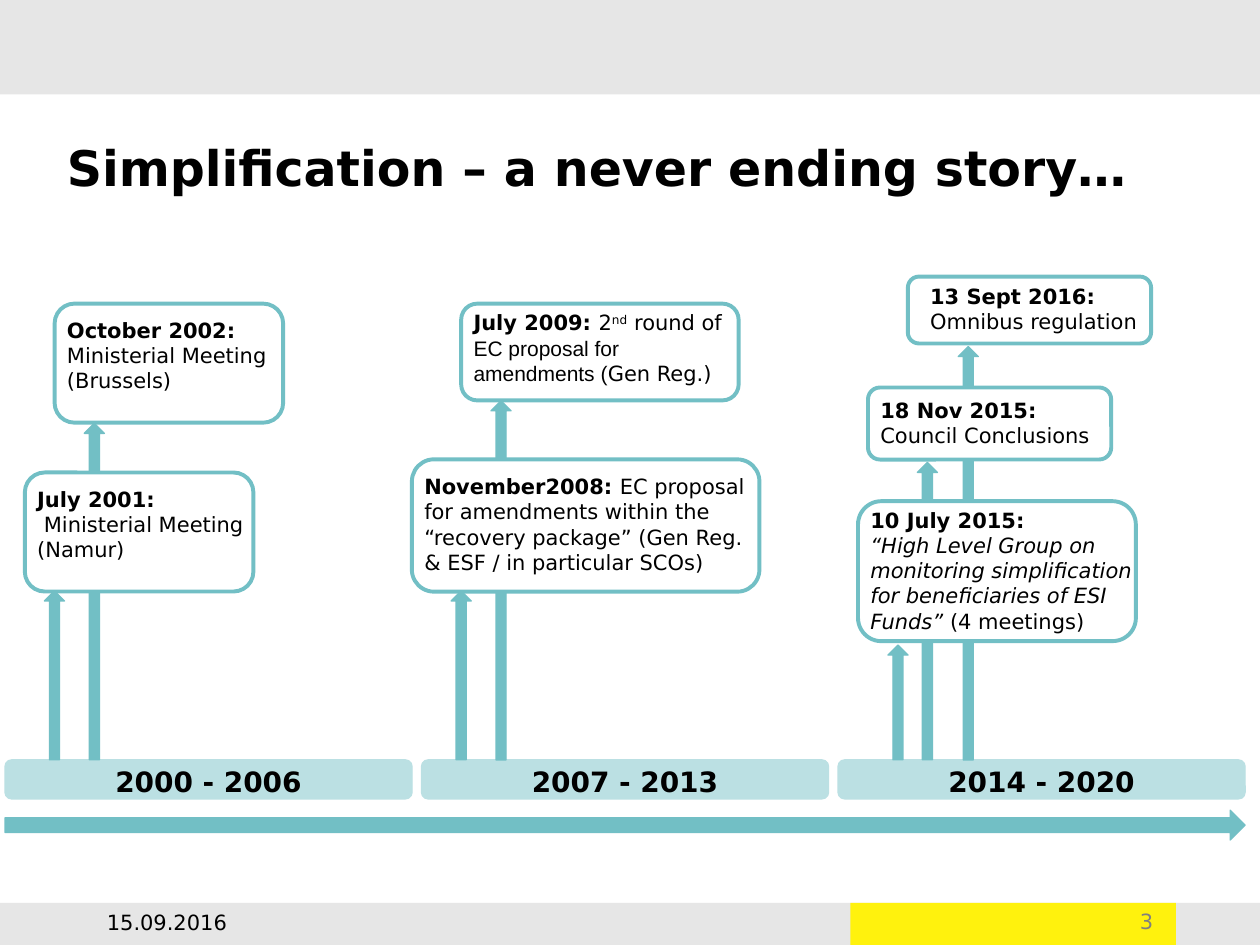
"""Build the simplification timeline slide."""
from dataclasses import dataclass, field

from lxml import etree
from pptx import Presentation
from pptx import util as u
from pptx.dml.color import RGBColor
from pptx.enum import shapes, text
from pptx.oxml import ns

TEAL = RGBColor(0x72, 0xBF, 0xC5)
PALE_TEAL = RGBColor(0xBB, 0xE0, 0xE3)
BAND_GREY = RGBColor(0xE6, 0xE6, 0xE6)
NUMBER_GREY = RGBColor(0x80, 0x80, 0x80)
YELLOW = RGBColor(0xFF, 0xF2, 0x0D)
WHITE = RGBColor(0xFF, 0xFF, 0xFF)
BLACK = RGBColor(0x00, 0x00, 0x00)
FONT = "DejaVu Sans"
SHAPE = shapes.MSO_SHAPE
ALIGN = text.PP_ALIGN

PERIOD_LEFT, PERIOD_PITCH, PERIOD_WIDTH = 2.9, 238, 232.6
PERIOD_TOP, PERIOD_HEIGHT = 434.2, 22.3
ARROW_WIDTH = 11.5


@dataclass(frozen=True)
class Span:
    words: str
    bold: bool = False
    italic: bool = False
    raised: bool = False
    font: str = FONT
    size: float = 12
    color: RGBColor = BLACK


@dataclass(frozen=True)
class Area:
    left: float
    top: float
    width: float
    height: float

    def points(self) -> list:
        return [u.Pt(n) for n in (self.left, self.top, self.width, self.height)]


@dataclass(frozen=True)
class Milestone:
    frame: Area
    words: Area
    paras: list


@dataclass(frozen=True)
class Period:
    label: str
    arrows: list = field(default_factory=list)
    milestones: list = field(default_factory=list)


def heading(words: str) -> Span:
    return Span(words, bold=True)


PERIODS = [
    Period("2000 - 2006", [(48.2, 241.9), (25.4, 337.7)], [
        Milestone(Area(14.2, 270, 130.6, 68), Area(14.2, 274.3, 158.4, 51),
                  [[heading("July 2001:")], [Span(" Ministerial Meeting (Namur)")]]),
        Milestone(Area(31.2, 173.5, 130.6, 68), Area(31.2, 177.8, 158.4, 51),
                  [[heading("October 2002:")], [Span("Ministerial Meeting")],
                   [Span("(Brussels)")]]),
    ]),
    Period("2007 - 2013", [(280.6, 229), (257.8, 337.7)], [
        Milestone(Area(235.4, 262.5, 198.6, 75.6), Area(235.4, 267.1, 198.6, 65.5),
                  [[heading("November2008: "),
                    Span("EC proposal for amendments within the “recovery package” "
                         "(Gen Reg. & ESF / in particular SCOs)")]]),
        Milestone(Area(263.5, 173.5, 158.6, 55.3), Area(263.5, 173.5, 158.6, 51),
                  [[heading("July 2009: "), Span("2"), Span("nd", raised=True),
                    Span(" round of "),
                    Span("EC proposal for amendments (", font="Arial"),
                    Span("Gen Reg.)")]]),
    ]),
    Period("2014 - 2020", [(547.6, 198), (524.2, 264.2), (507.4, 368.6)], [
        Milestone(Area(490.3, 286.4, 158.8, 80), Area(490.3, 286.4, 175.7, 80),
                  [[heading("10 July 2015:")],
                   [Span("“High Level Group on monitoring simplification for "
                         "beneficiaries of ESI Funds” ", italic=True),
                    Span("(4 meetings)")]]),
        Milestone(Area(496, 221.4, 139, 41.2), Area(496, 223.4, 158.4, 36),
                  [[heading("18 Nov 2015:")], [Span("Council Conclusions")]]),
        Milestone(Area(518.8, 158.1, 139, 38.2), Area(524.4, 158.5, 158.4, 36),
                  [[heading("13 Sept 2016:")], [Span("Omnibus regulation")]]),
    ]),
]


def add_block(page, kind, area: Area, fill: RGBColor, line=None, weight: float = 0.75) -> None:
    block = page.shapes.add_shape(kind, *area.points())
    block.shadow.inherit = False
    block.fill.solid()
    block.fill.fore_color.rgb = fill
    if line is None:
        block.line.fill.background()
    else:
        block.line.color.rgb = line
        block.line.width = u.Pt(weight)


def write_paras(frame, paras: list, align) -> None:
    frame.word_wrap = True
    for index, spans in enumerate(paras):
        para = frame.paragraphs[0] if index == 0 else frame.add_paragraph()
        para.alignment = align
        for span in spans:
            run = para.add_run()
            run.text = span.words
            run.font.name = span.font
            run.font.size = u.Pt(span.size)
            run.font.bold = span.bold
            run.font.italic = span.italic
            run.font.color.rgb = span.color
            properties = run.font._element
            if span.raised:
                properties.set("baseline", "30000")
            latin = properties.find(ns.qn("a:latin"))
            for tag in ("a:cs", "a:ea"):
                script_font = etree.Element(ns.qn(tag), typeface=span.font)
                latin.addnext(script_font)


def add_words(page, area: Area, paras: list, align=ALIGN.LEFT) -> None:
    box = page.shapes.add_textbox(*area.points())
    write_paras(box.text_frame, paras, align)


def add_title(page, words: str) -> None:
    title = page.shapes.title
    title.left, title.top, title.width, title.height = Area(31, 71.3, 651.6, 48.2).points()
    title.text_frame.vertical_anchor = text.MSO_ANCHOR.MIDDLE
    write_paras(title.text_frame, [[Span(words, bold=True, size=28)]], ALIGN.LEFT)


def add_furniture(page) -> None:
    add_block(page, SHAPE.RECTANGLE, Area(0, 0, 720, 54), BAND_GREY)
    add_block(page, SHAPE.RECTANGLE, Area(0, 516, 720, 24), BAND_GREY)
    add_block(page, SHAPE.RECTANGLE, Area(486, 516, 186, 24), YELLOW)
    add_words(page, Area(516, 515.5, 150, 24), [[Span("3", color=NUMBER_GREY)]], ALIGN.RIGHT)
    add_words(page, Area(54, 516, 150, 24), [[Span("15.09.2016")]])


def add_period(page, period: Period, left: float) -> None:
    add_block(page, SHAPE.ROUNDED_RECTANGLE,
              Area(left, PERIOD_TOP, PERIOD_WIDTH, PERIOD_HEIGHT), PALE_TEAL, PALE_TEAL)
    add_words(page, Area(left, 433.4, PERIOD_WIDTH, 26.6),
              [[Span(period.label, bold=True, size=16)]], ALIGN.CENTER)
    for arrow_left, arrow_top in period.arrows:
        add_block(page, SHAPE.UP_ARROW,
                  Area(arrow_left, arrow_top, ARROW_WIDTH, PERIOD_TOP - arrow_top), TEAL, TEAL)
    for milestone in period.milestones:
        add_block(page, SHAPE.ROUNDED_RECTANGLE, milestone.frame, WHITE, TEAL, 2.25)
        add_words(page, milestone.words, milestone.paras)


def main() -> None:
    deck = Presentation()
    deck.slide_width, deck.slide_height = u.Pt(720), u.Pt(540)
    page = deck.slides.add_slide(deck.slide_layouts[5])
    add_furniture(page)
    add_title(page, "Simplification – a never ending story…")
    add_block(page, SHAPE.RIGHT_ARROW, Area(PERIOD_LEFT, 463, 708.6, 17), TEAL, TEAL)
    for index, period in enumerate(PERIODS):
        add_period(page, period, PERIOD_LEFT + index * PERIOD_PITCH)
    deck.save("out.pptx")


if __name__ == "__main__":
    main()
